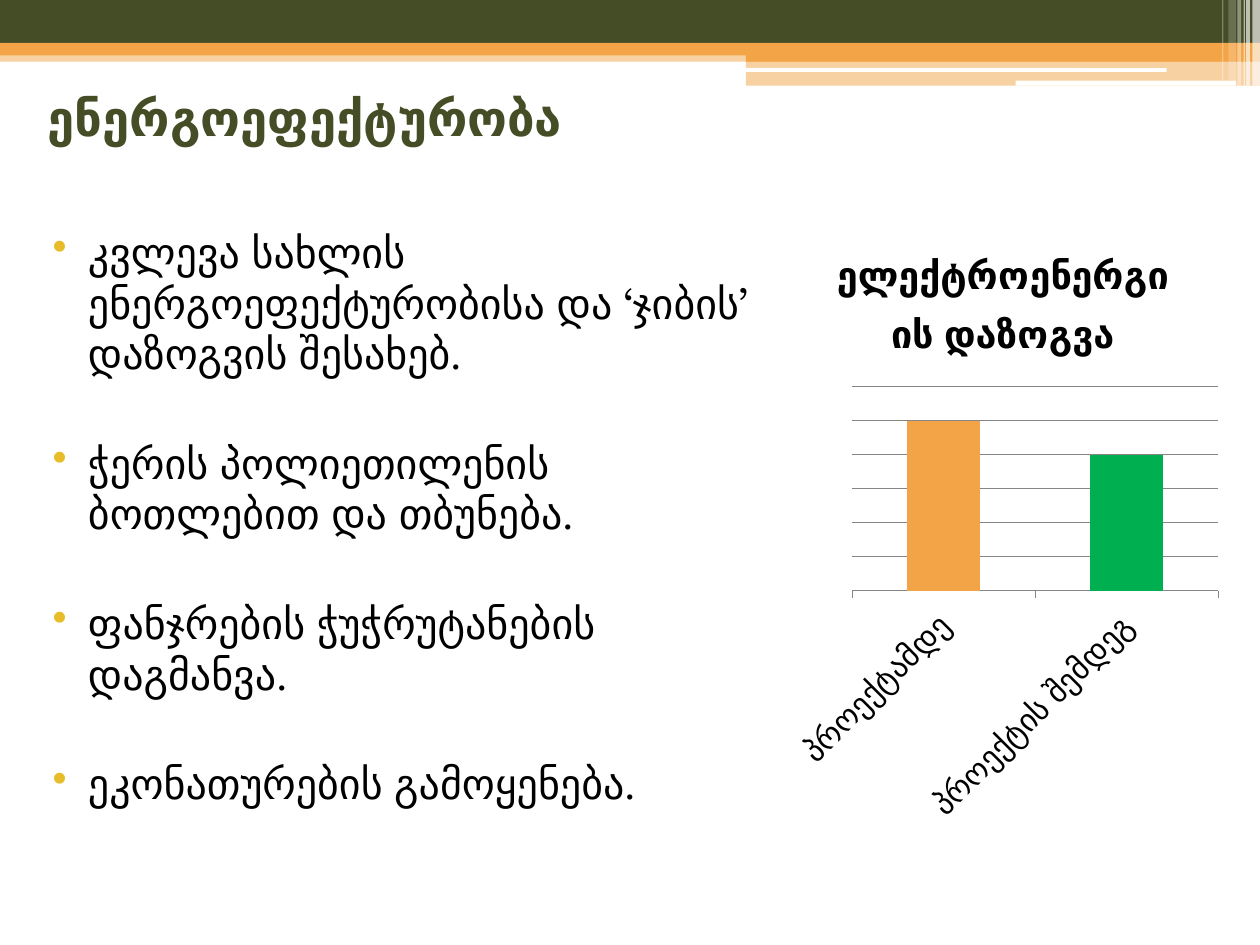
from dataclasses import dataclass

import lxml.etree
import pptx
import pptx.chart.data
import pptx.dml.color
import pptx.enum.chart
import pptx.enum.shapes
import pptx.enum.text
import pptx.oxml
import pptx.oxml.ns
import pptx.util
from pptx.util import Inches, Pt

COLORS = {
    "olive": "444D26",
    "orange": "F3A447",
    "green": "00B050",
    "gold": "E7BC29",
    "sage": "A5B592",
    "grid": "868686",
    "white": "FFFFFF",
    "black": "000000",
}
TITLE_FONT = "Karla"
BODY_FONT = "TeX Gyre Schola"
POINTS = (
    "კვლევა სახლის ენერგოეფექტურობისა და ‘ჯიბის’ დაზოგვის შესახებ.",
    "ჭერის პოლიეთილენის ბოთლებით და თბუნება.",
    "ფანჯრების ჭუჭრუტანების დაგმანვა.",
    "ეკონათურების გამოყენება.",
)


@dataclass(frozen=True)
class Band:
    left: float
    top: float
    width: float
    height: float
    color: str
    opacity: int = 100
    rounded: bool = False


BANDS = (
    Band(0, 0.4, 10, 0.09, "orange", 50),
    Band(0, 0, 10, 0.34, "olive"),
    Band(0, 0.34, 10, 0.1, "orange"),
    Band(5.92, 0.39, 4.08, 0.1, "orange"),
    Band(5.92, 0.48, 4.08, 0.2, "orange", 50),
    Band(5.91, 0.54, 3.35, 0.03, "white", rounded=True),
    Band(8.06, 0.64, 1.75, 0.04, "white", rounded=True),
    Band(9.94, 0, 0.06, 0.68, "white", 65),
    Band(9.89, 0, 0.03, 0.68, "white", 65),
    Band(9.87, 0, 0.01, 0.68, "white", 60),
    Band(9.82, 0, 0.03, 0.68, "white", 40),
    Band(9.75, 0, 0.06, 0.64, "white", 20),
    Band(9.7, 0, 0.01, 0.64, "white", 30),
)


def rgb(name: str) -> pptx.dml.color.RGBColor:
    return pptx.dml.color.RGBColor.from_string(COLORS[name])


def style_font(font, name: str, size: float, color: str, bold: bool = False) -> None:
    font.name = name
    font.size = Pt(size)
    font.bold = bold
    font.color.rgb = rgb(color)


def paint(fill, color: str) -> None:
    fill.solid()
    fill.fore_color.rgb = rgb(color)


def draw_band(slide, band: Band) -> None:
    kinds = pptx.enum.shapes.MSO_SHAPE
    shape = slide.shapes.add_shape(
        kinds.ROUNDED_RECTANGLE if band.rounded else kinds.RECTANGLE,
        Inches(band.left), Inches(band.top), Inches(band.width), Inches(band.height),
    )
    shape.shadow.inherit = False
    shape.line.fill.background()
    paint(shape.fill, band.color)
    if band.opacity < 100:
        color = shape.fill._xPr.find(".//" + pptx.oxml.ns.qn("a:srgbClr"))
        alpha = lxml.etree.SubElement(color, pptx.oxml.ns.qn("a:alpha"))
        alpha.set("val", str(band.opacity * 1000))


def draw_title(slide) -> None:
    title = slide.shapes.title
    title.left, title.top = Inches(0.28), Inches(0.52)
    title.width, title.height = Inches(9.22), Inches(1.25)
    frame = title.text_frame
    frame.text = "ენერგოეფექტურობა"
    frame.vertical_anchor = pptx.enum.text.MSO_ANCHOR.MIDDLE
    frame.margin_bottom = Inches(0.48)
    heading = frame.paragraphs[0]
    heading.alignment = pptx.enum.text.PP_ALIGN.LEFT
    style_font(heading.font, TITLE_FONT, 28, "olive", bold=True)


def add_bullet(paragraph) -> None:
    properties = paragraph._p.get_or_add_pPr()
    properties.set("marL", str(Inches(0.4)))
    properties.set("indent", str(Inches(-0.28)))
    bullet_color = lxml.etree.Element(pptx.oxml.ns.qn("a:buClr"))
    lxml.etree.SubElement(
        bullet_color, pptx.oxml.ns.qn("a:srgbClr"), val=COLORS["gold"]
    )
    bullet = lxml.etree.Element(pptx.oxml.ns.qn("a:buChar"), char="•")
    defaults = properties.find(pptx.oxml.ns.qn("a:defRPr"))
    defaults.addprevious(bullet_color)
    defaults.addprevious(bullet)


def draw_points(slide) -> None:
    body = slide.shapes.add_textbox(
        Inches(0.2), Inches(1.75), Inches(6.14), Inches(5.54)
    )
    frame = body.text_frame
    frame.word_wrap = True
    for index, point in enumerate(POINTS):
        paragraph = frame.add_paragraph() if index else frame.paragraphs[0]
        paragraph.text = point
        paragraph.space_before = Pt(34 if index else 3)
        style_font(paragraph.font, BODY_FONT, 24, "black")
        add_bullet(paragraph)


def draw_savings_chart(slide) -> None:
    savings = pptx.chart.data.CategoryChartData()
    savings.categories = ["პროექტამდე", "პროექტის შემდეგ"]
    savings.add_series("Series 1", (100, 80))
    chart = slide.shapes.add_chart(
        pptx.enum.chart.XL_CHART_TYPE.COLUMN_CLUSTERED,
        Inches(6.18), Inches(1.7), Inches(3.56), Inches(4.95), savings,
    ).chart
    style_font(chart.font, BODY_FONT, 18, "black")
    chart.has_legend = False
    chart.has_title = True
    chart.chart_title.include_in_layout = False
    heading = chart.chart_title.text_frame
    heading.text = "ელექტროენერგიის დაზოგვა"
    style_font(heading.paragraphs[0].font, BODY_FONT, 21.6, "black", bold=True)

    values = chart.value_axis
    values.visible = False
    values.minimum_scale, values.maximum_scale, values.major_unit = 0, 120, 20
    values.has_major_gridlines = True
    categories = chart.category_axis
    categories.major_tick_mark = pptx.enum.chart.XL_TICK_MARK.OUTSIDE
    for line in (values.major_gridlines.format.line, categories.format.line):
        line.color.rgb = rgb("grid")
        line.width = Pt(0.75)

    plot = chart.plots[0]
    plot.vary_by_categories = False
    plot.gap_width = 150
    columns = plot.series[0]
    paint(columns.format.fill, "sage")
    for index, color in enumerate(("orange", "green")):
        paint(columns.points[index].format.fill, color)


def main() -> None:
    deck = pptx.Presentation()
    deck.slide_width, deck.slide_height = Inches(10), Inches(7.5)
    slide = deck.slides.add_slide(deck.slide_layouts[5])
    for band in BANDS:
        draw_band(slide, band)
    draw_title(slide)
    draw_points(slide)
    draw_savings_chart(slide)
    deck.save("out.pptx")


if __name__ == "__main__":
    main()
